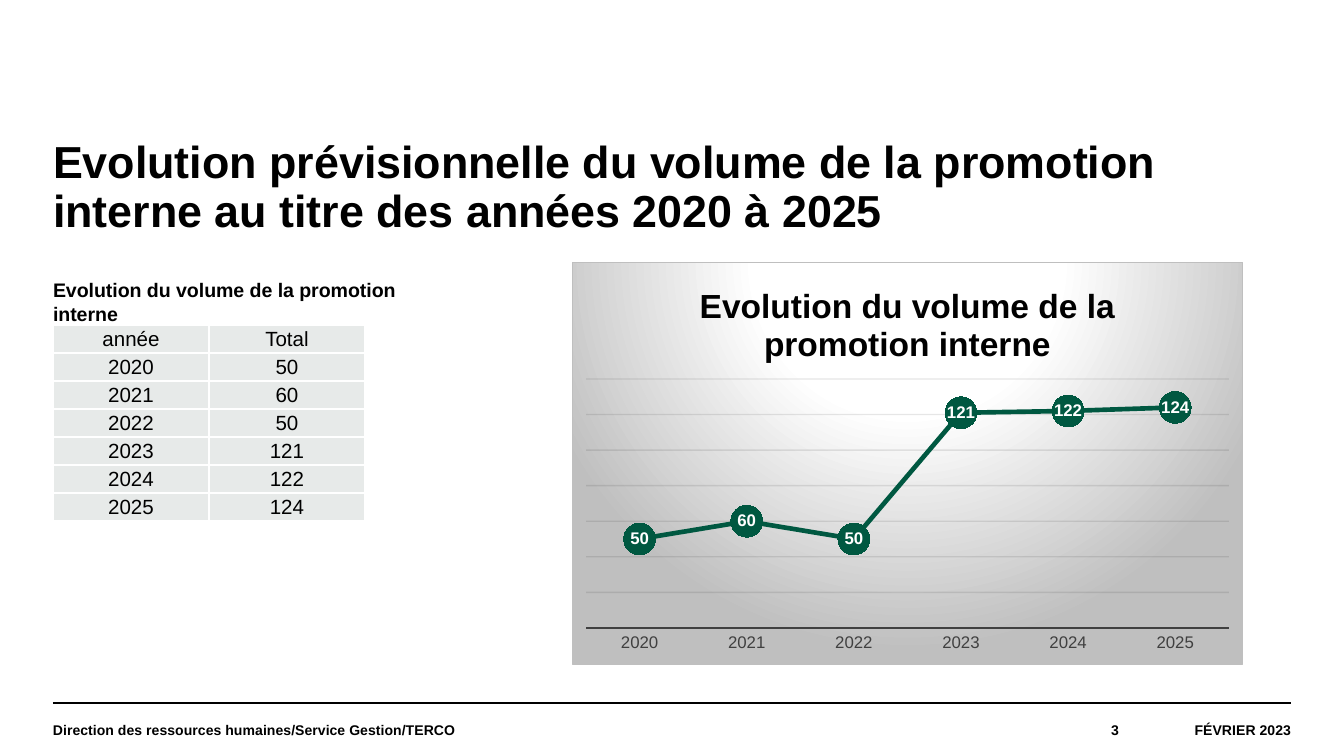
from lxml import etree
from pptx import Presentation
from pptx.chart.data import CategoryChartData as ChartData
from pptx.dml.color import RGBColor as RGB
from pptx.enum.chart import XL_CHART_TYPE as Kind, XL_LABEL_POSITION as Spot
from pptx.enum.chart import XL_MARKER_STYLE as Mark, XL_TICK_MARK as Tick
from pptx.enum.shapes import MSO_CONNECTOR as Link
from pptx.enum.text import MSO_ANCHOR as Anchor, MSO_AUTO_SIZE as Fit, PP_ALIGN as Align
from pptx.oxml import parse_xml
from pptx.oxml.ns import nsdecls, qn
from pptx.util import Emu, Pt

COLORS = {"ink": "000000", "paper": "FFFFFF", "cell": "E7EAE9", "green": "005841",
          "axis": "404040", "grid": "0D0D0D", "gray": "BFBFBF"}
FONT = "Arial"
SCALE = 914400 / 134.4
YEARS = ["2020", "2021", "2022", "2023", "2024", "2025"]
TOTALS = [50, 60, 50, 121, 122, 124]
TOPIC = "Evolution du volume de la promotion interne"


def px(*vals):
    return [Emu(round(v * SCALE)) for v in vals]


def rgb(name):
    return RGB.from_string(COLORS[name])


def solid(name):
    return f'<a:solidFill><a:srgbClr val="{COLORS[name]}"/></a:solidFill>'


class Page:
    def __init__(self, deck):
        self.slide = deck.slides.add_slide(deck.slide_layouts[5])
        self.shapes = self.slide.shapes

    def style(self, font, size, color="ink", bold=False):
        font.name, font.size, font.bold = FONT, Pt(size), bold
        font.color.rgb = rgb(color)

    def fill_text(self, shape, text, size, align, anchor):
        frame = shape.text_frame
        frame.word_wrap, frame.auto_size = True, Fit.NONE
        frame.vertical_anchor = anchor
        frame.margin_left = frame.margin_right = frame.margin_top = frame.margin_bottom = 0
        par = frame.paragraphs[0]
        par.text, par.alignment = text, align
        self.style(par.font, size, bold=True)
        return par

    def title(self, text, *box):
        shape = self.shapes.title
        shape.left, shape.top, shape.width, shape.height = px(*box)
        par = self.fill_text(shape, text, 24, Align.LEFT, Anchor.TOP)
        par.line_spacing = 0.9

    def text(self, text, box, size, align=Align.LEFT, anchor=Anchor.MIDDLE):
        shape = self.shapes.add_textbox(*px(*box))
        return self.fill_text(shape, text, size, align, anchor)

    def rule(self, *ends):
        line = self.shapes.add_connector(Link.STRAIGHT, *px(*ends))
        line.line.color.rgb, line.line.width = rgb("ink"), Pt(1)
        etree.SubElement(line._element.spPr, qn("a:effectLst"))

    def table(self, rows, left, top, wide, high):
        count, span = len(rows), len(rows[0])
        box = px(left, top, wide * span, high * count)
        table = self.shapes.add_table(count, span, *box).table
        for col in table.columns:
            col.width = px(wide)[0]
        for row, vals in zip(table.rows, rows):
            row.height = px(high)[0]
            for cell, val in zip(row.cells, vals):
                self.cell(cell, val)

    def cell(self, cell, val):
        cell.margin_left = cell.margin_right = cell.margin_top = px(1)[0]
        cell.margin_bottom = 0
        cell.vertical_anchor = Anchor.MIDDLE
        par = cell.text_frame.paragraphs[0]
        par.text, par.alignment = str(val), Align.CENTER
        self.style(par.font, 11)
        props = cell._tc.get_or_add_tcPr()
        for side in ("lnL", "lnR", "lnT", "lnB"):
            props.append(parse_xml(
                f'<a:{side} {nsdecls("a")} w="12700">{solid("paper")}</a:{side}>'))
        cell.fill.solid()
        cell.fill.fore_color.rgb = rgb("cell")

    def chart(self, cats, vals, *box):
        data = ChartData()
        data.categories = cats
        data.add_series("Total", vals)
        chart = self.shapes.add_chart(Kind.LINE_MARKERS, *px(*box), data).chart
        self.style(chart.font, 10)
        chart.has_legend = False
        chart.has_title = True
        head = chart.chart_title.text_frame.paragraphs[0]
        head.text = TOPIC
        self.style(head.font, 18, bold=True)
        self.axes(chart)
        self.series(chart.plots[0])
        self.backdrop(chart)

    def axes(self, chart):
        cat, val = chart.category_axis, chart.value_axis
        cat.major_tick_mark = cat.minor_tick_mark = Tick.NONE
        self.style(cat.tick_labels.font, 9, "axis")
        cat.format.line.color.rgb, cat.format.line.width = rgb("axis"), Pt(1.5)
        val.visible = False
        val.minimum_scale, val.maximum_scale, val.major_unit = 0, 140, 20
        val.has_major_gridlines = True
        grid = val.major_gridlines.format.line
        grid.color.rgb, grid.width = rgb("grid"), Pt(0.75)
        # Faint grid lines
        tint = val.major_gridlines._xAx.find(qn("c:majorGridlines")).find(
            ".//" + qn("a:srgbClr"))
        etree.SubElement(tint, qn("a:alpha")).set("val", "10000")

    def series(self, plot):
        plot.vary_by_categories = False
        line = plot.series[0]
        line.smooth = False
        line.format.line.color.rgb, line.format.line.width = rgb("green"), Pt(2.5)
        mark = line.marker
        mark.style, mark.size = Mark.CIRCLE, 17
        mark.format.fill.solid()
        mark.format.fill.fore_color.rgb = rgb("green")
        mark.format.line.color.rgb = rgb("green")
        labels = line.data_labels
        labels.show_value, labels.position = True, Spot.CENTER
        self.style(labels.font, 9, "paper", True)

    def backdrop(self, chart):
        # Radial gradient behind the chart
        stops = "".join(
            f'<a:gs pos="{pos}000"><a:srgbClr val="{COLORS[name]}"/></a:gs>'
            for pos, name in ((0, "paper"), (39, "paper"), (100, "gray")))
        root = chart._chartSpace
        root.find(qn("c:chart")).addnext(parse_xml(
            f'<c:spPr {nsdecls("c", "a")}><a:gradFill><a:gsLst>{stops}</a:gsLst>'
            '<a:path path="circle"><a:fillToRect l="50000" t="-80000" r="50000" b="180000"/>'
            f'</a:path></a:gradFill><a:ln w="9525">{solid("gray")}</a:ln></c:spPr>'))
        # Fixed plot area
        area = root.find(".//" + qn("c:plotArea"))
        for old in area.findall(qn("c:layout")):
            area.remove(old)
        sizes = "".join(f'<c:{key} val="{val}"/>' for key, val in (
            ("layoutTarget", "inner"), ("xMode", "edge"), ("yMode", "edge"),
            ("x", 0.02), ("y", 0.29), ("w", 0.96), ("h", 0.62)))
        area.insert(0, parse_xml(
            f'<c:layout {nsdecls("c")}><c:manualLayout>{sizes}</c:manualLayout></c:layout>'))


def main():
    deck = Presentation()
    deck.slide_width, deck.slide_height = px(1344, 756)
    page = Page(deck)

    # Heading
    page.title("Evolution prévisionnelle du volume de la promotion interne "
               "au titre des années 2020 à 2025", 53, 140, 1191, 106)

    # Yearly totals
    note = page.text(TOPIC, (53, 278, 371, 372), 10.5, anchor=Anchor.TOP)
    note.space_after = Pt(8)
    page.table([("année", "Total"), *zip(YEARS, TOTALS)], 53, 325, 156, 28)
    page.chart(YEARS, TOTALS, 572, 262, 671, 403)

    # Footer
    page.rule(53, 703, 1291, 703)
    for text, left, wide, align in (
            ("Direction des ressources humaines/Service Gestion/TERCO", 53, 868, Align.LEFT),
            ("3", 921, 198, Align.RIGHT),
            ("FÉVRIER 2023", 1119, 172, Align.RIGHT)):
        page.text(text, (left, 703, wide, 53), 7.5, align)

    deck.save("out.pptx")


if __name__ == "__main__":
    main()
